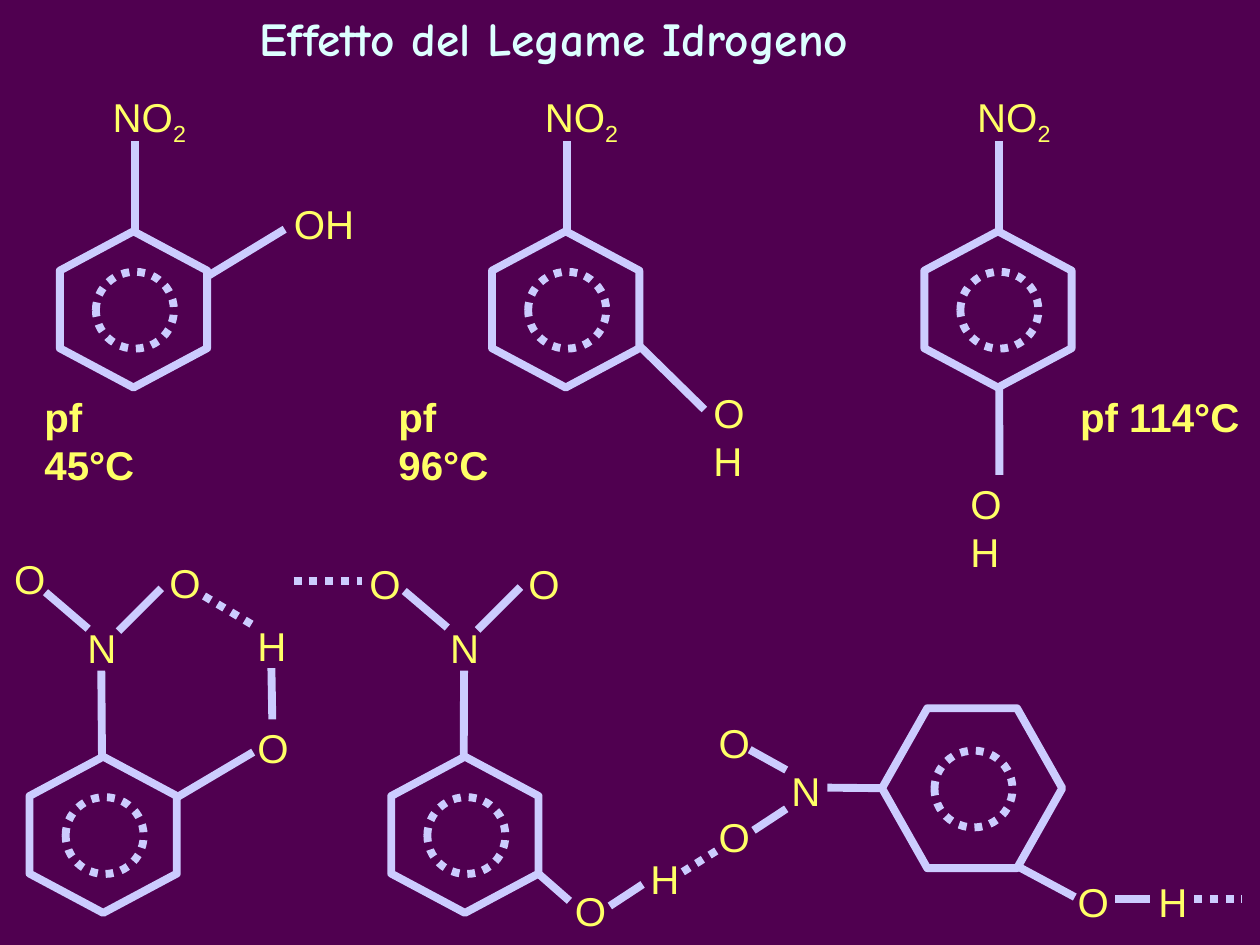
import dataclasses

import pptx
import pptx.dml.color
import pptx.enum.dml
import pptx.enum.shapes
import pptx.enum.text
import pptx.oxml.ns
import pptx.oxml.xmlchemy
import pptx.util

Pt = pptx.util.Pt
rgb = pptx.dml.color.RGBColor.from_string
MSO_SHAPE = pptx.enum.shapes.MSO_SHAPE


@dataclasses.dataclass
class Theme:
    background: str = "500050"
    bond: str = "CCCCFF"
    label: str = "FFFF66"
    title: str = "DDFFFF"
    label_font: str = "Arial"
    title_font: str = "Comic Neue"
    label_size: float = 23
    title_size: float = 27
    bond_width: float = 4.5


theme = Theme()
presentation = pptx.Presentation()
presentation.slide_width, presentation.slide_height = Pt(720), Pt(540)
slide = presentation.slides.add_slide(presentation.slide_layouts[5])
slide.background.fill.solid()
slide.background.fill.fore_color.rgb = rgb(theme.background)
strokes = []  # every (shape, dotted) that takes the bond line


def write(shape, text, subscript="", font=theme.label_font, size=theme.label_size,
          color=theme.label, bold=False):
    frame = shape.text_frame
    frame.auto_size = pptx.enum.text.MSO_AUTO_SIZE.NONE
    frame.word_wrap = True
    frame.vertical_anchor = pptx.enum.text.MSO_ANCHOR.TOP
    frame.margin_left = frame.margin_right = Pt(4.5)
    frame.margin_top = frame.margin_bottom = Pt(2.25)
    paragraph = frame.paragraphs[0]
    paragraph.alignment = pptx.enum.text.PP_ALIGN.LEFT
    for part in filter(None, (text, subscript)):
        run = paragraph.add_run()
        run.text = part
        run.font.name, run.font.size, run.font.bold = font, Pt(size), bold
        run.font.color.rgb = rgb(color)
    if subscript:
        run.font._element.set("baseline", "-25000")
    return shape


def add_bond(start, end, dotted=False):
    """An end is a point (x, y) or a joined (shape, side)."""
    points = [p if isinstance(p[0], (int, float)) else (0, 0) for p in (start, end)]
    bond = slide.shapes.add_connector(pptx.enum.shapes.MSO_CONNECTOR.STRAIGHT,
                                      *(Pt(v) for point in points for v in point))
    for point, join in ((start, bond.begin_connect), (end, bond.end_connect)):
        if not isinstance(point[0], (int, float)):
            join(*point)
    strokes.append((bond, dotted))


# Title
title = slide.shapes.title
title.left, title.top, title.width, title.height = Pt(144), Pt(3), Pt(398), Pt(37)
write(title, "Effetto del Legame Idrogeno", font=theme.title_font,
      size=theme.title_size, color=theme.title, bold=True)

# Aromatic rings: centre, size, rotation, point depth
pitch = 247
rings = [(76.3 + pitch * i, 176.8, 89.3, 84.2, 270, 0.267) for i in range(3)]
rings += [(x, 477, 89.3, 84.2, 270, 0.267) for x in (59, 265.7)]
rings += [(555.5, 450.4, 103, 91.4, 180, 0.283)]
for x, y, width, height, rotation, depth in rings:
    hexagon = slide.shapes.add_shape(MSO_SHAPE.HEXAGON, Pt(x - width / 2),
                                     Pt(y - height / 2), Pt(width), Pt(height))
    hexagon.rotation = rotation
    hexagon.adjustments[0] = depth
    circle = slide.shapes.add_shape(MSO_SHAPE.OVAL, Pt(x - 21.5), Pt(y - 21.5),
                                    Pt(44.6), Pt(43.9))
    strokes += [(hexagon, False), (circle, True)]

# Top row: three isomers with nitro group, hydroxyl and melting point
for i in range(3):
    nitro = slide.shapes.add_textbox(Pt(59.8 + pitch * i), Pt(50.4), Pt(54), Pt(31))
    write(nitro, "NO", subscript="2")
    add_bond((77 + pitch * i, 80.6), (77 + pitch * i, 131.8))

hydroxyls = []
for x, y, width in ((163.4, 111.6, 46), (403.2, 219.6, 42), (550.1, 271.4, 42)):
    hydroxyl = slide.shapes.add_textbox(Pt(x), Pt(y), Pt(width), Pt(31))
    hydroxyls.append(write(hydroxyl, "OH"))
add_bond((118.8, 157.7), (162.7, 131))
add_bond((365.8, 198), (402.5, 234))
add_bond((571, 221), (hydroxyls[2], 0))

for x, width, melting_point in ((20.9, 86, "pf 45°C"), (223.2, 86, "pf 96°C"),
                                (612.7, 104, "pf 114°C")):
    caption = slide.shapes.add_textbox(Pt(x), Pt(221.8), Pt(width), Pt(32))
    write(caption, melting_point, bold=True)

# Bottom row: single atoms, keyed by molecule and place
atom_places = {
    "ortho N": ("N", 45.4, 354.2), "ortho O left": ("O", 3.6, 314.6),
    "ortho O right": ("O", 92.2, 316.8), "ortho H": ("H", 142.6, 352.8),
    "ortho O ring": ("O", 142.6, 411.1),
    "meta N": ("N", 252.7, 354.2), "meta O left": ("O", 206.6, 317.5),
    "meta O right": ("O", 297.4, 317.5), "meta O ring": ("O", 324, 504),
    "meta H": ("H", 367.2, 486),
    "turned N": ("N", 447.8, 435.6), "turned O upper": ("O", 406.1, 408.2),
    "turned O lower": ("O", 406.1, 462.2), "turned O ring": ("O", 611.3, 499),
    "turned H": ("H", 657.4, 499),
}
atoms = {}
for place, (symbol, x, y) in atom_places.items():
    box = slide.shapes.add_textbox(Pt(x), Pt(y), Pt(26 if symbol == "O" else 25), Pt(29))
    atoms[place] = write(box, symbol)

# Covalent bonds
for start, end in (
    ((atoms["ortho N"], 2), (58.3, 432.7)),
    ((100.8, 455.8), (144.7, 429.8)),
    ((atoms["ortho H"], 2), (atoms["ortho O ring"], 0)),
    ((67.7, 360.7), (92.2, 336.2)),
    ((26, 338.4), (50.4, 359.3)),
    ((atoms["meta N"], 2), (265, 432.7)),
    ((272.9, 360), (297.4, 335.5)),
    ((231, 337.7), (255.6, 358.6)),
    ((308.2, 499.7), (325.4, 514.8)),
    ((348.5, 517.7), (367.2, 505.4)),
    ((atoms["turned N"], 3), (504, 450.4)),
    ((430.6, 474.5), (449.3, 462.2)),
    ((428.4, 428.4), (449.3, 440)),
    ((583.2, 496), (614.2, 512.6)),
    ((atoms["turned O ring"], 3), (atoms["turned H"], 1)),
):
    add_bond(start, end)

# Hydrogen bonds
add_bond((116.6, 340.6), (146.9, 358.6), dotted=True)
add_bond((167.8, 332), (atoms["meta O left"], 1), dotted=True)
add_bond((390.2, 498.2), (409.7, 486), dotted=True)
add_bond((atoms["turned H"], 3), (710, 513.5), dotted=True)

# One line style for rings and bonds
for shape, dotted in strokes:
    shape.line.color.rgb = rgb(theme.bond)
    shape.line.width = Pt(theme.bond_width)
    if dotted:
        shape.line.dash_style = pptx.enum.dml.MSO_LINE.ROUND_DOT
    if shape.shape_type == pptx.enum.shapes.MSO_SHAPE_TYPE.AUTO_SHAPE:
        shape.fill.background()
        shape.shadow.inherit = False
    else:
        shape._element.spPr.append(pptx.oxml.xmlchemy.OxmlElement("a:effectLst"))

presentation.save("out.pptx")
